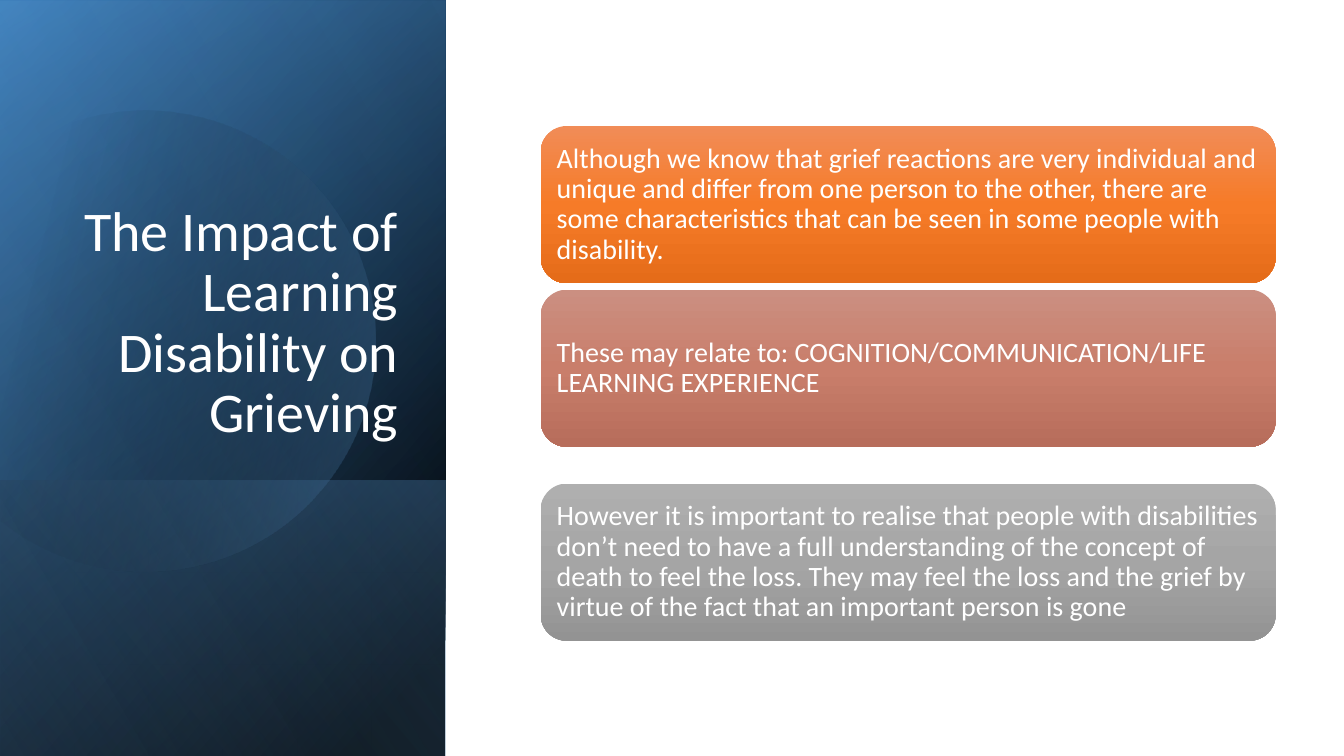
from dataclasses import dataclass
from itertools import pairwise
from math import cos, radians, sin, tan

from lxml import etree
from pptx import Presentation
from pptx.dml.color import RGBColor
from pptx.enum.shapes import MSO_SHAPE
from pptx.enum.text import MSO_ANCHOR, MSO_AUTO_SIZE, PP_ALIGN
from pptx.oxml.ns import qn
from pptx.util import Pt

RECTANGLE = MSO_SHAPE.RECTANGLE
ROUNDED = MSO_SHAPE.ROUNDED_RECTANGLE
BOTTOM, MIDDLE = MSO_ANCHOR.BOTTOM, MSO_ANCHOR.MIDDLE
LEFT, RIGHT = PP_ALIGN.LEFT, PP_ALIGN.RIGHT
NO_AUTOFIT = MSO_AUTO_SIZE.NONE
TITLE_ONLY = 5


@dataclass(frozen=True)
class Theme:
    """Colours, font and type sizes of the slide."""
    font: str = "Calibri"
    title_size: int = 40
    card_size: int = 20
    text: str = "FFFFFF"
    black: str = "000000"
    deep_blue: str = "2E75B6"
    blue: str = "5B9BD5"
    pale_blue: str = "9DC3E6"
    orange: tuple = ("F18C57", "F67B28", "E56C19")
    rose: tuple = ("CB8F81", "C97E6B", "B76D5B")
    grey: tuple = ("AFAFAF", "A5A5A5", "939393")


THEME = Theme()
PANEL = (-111, 111, 540, 318.24)
PANEL_FOOT = (60.5, 282.6, 197.3, 318.24)
CIRCLE_TURNS = (-118, -90, 0, 90, 150)
CARDS = [
    (90, THEME.orange, "Although we know that grief reactions are very individual "
     "and unique and differ from one person to the other, there are some "
     "characteristics that can be seen in some people with disability."),
    (206.9, THEME.rose, "These may relate to: COGNITION/COMMUNICATION/LIFE "
     "LEARNING EXPERIENCE"),
    (345.4, THEME.grey, "However it is important to realise that people with "
     "disabilities don’t need to have a full understanding of the concept of "
     "death to feel the loss. They may feel the loss and the grief by virtue of "
     "the fact that an important person is gone"),
]


def paint_gradient(shape, stops, angle):
    """Fill a shape with (position, colour, opacity) stops at a clockwise angle."""
    shape.shadow.inherit = False
    shape.line.fill.background()
    shape.fill.gradient()
    shape.fill.gradient_angle = 360 - angle
    stop_list = shape._element.spPr.find(qn("a:gradFill")).find(qn("a:gsLst"))
    for old_stop in list(stop_list):
        stop_list.remove(old_stop)
    for position, colour, opacity in stops:
        stop = etree.SubElement(stop_list, qn("a:gs"), pos=str(position * 1000))
        tint = etree.SubElement(stop, qn("a:srgbClr"), val=colour)
        if opacity < 100:
            etree.SubElement(tint, qn("a:alpha"), val=str(opacity * 1000))


def add_panel(page, place, stops, angle):
    """Add a mirrored rectangle turned by a quarter."""
    panel = page.shapes.add_shape(RECTANGLE, *map(Pt, place))
    panel.rotation = 90
    panel._element.spPr.find(qn("a:xfrm")).set("flipH", "1")
    paint_gradient(panel, stops, angle)


def arc_point(centre, radius, turn, reach=0):
    """Return a point on a circle, moved by reach radii along its tangent."""
    across, down = cos(radians(turn)), sin(radians(turn))
    return (Pt(centre[0] + radius * (across - reach * down)),
            Pt(centre[1] + radius * (down + reach * across)))


def add_clipped_circle(page, centre, radius, rotation, stops, angle):
    """Add a circle with one side cut off by a straight edge."""
    points = [arc_point(centre, radius, turn) for turn in CIRCLE_TURNS]
    builder = page.shapes.build_freeform(*points[0])
    builder.add_line_segments(points[1:], close=True)
    circle = builder.convert_to_shape()
    lines = list(circle._element.spPr.iter(qn("a:lnTo")))
    for line, (start, end) in zip(lines, pairwise(CIRCLE_TURNS)):
        reach = 4 / 3 * tan(radians(end - start) / 4)
        curve = etree.Element(qn("a:cubicBezTo"))
        for turn, shift in ((start, reach), (end, -reach), (end, 0)):
            x, y = arc_point(centre, radius, turn, shift)
            etree.SubElement(curve, qn("a:pt"), x=str(x - circle.left),
                             y=str(y - circle.top))
        line.getparent().replace(line, curve)
    circle.rotation = rotation
    paint_gradient(circle, stops, angle)


def write_text(shape, text, size, align, anchor):
    """Write one paragraph into a shape and format it."""
    frame = shape.text_frame
    frame.text = text
    frame.word_wrap = True
    frame.auto_size = NO_AUTOFIT
    frame.vertical_anchor = anchor
    para = frame.paragraphs[0]
    para.alignment = align
    para.line_spacing = 0.9
    for span in para.runs:
        span.font.name = THEME.font
        span.font.size = Pt(size)
        span.font.color.rgb = RGBColor.from_string(THEME.text)


def place_title(page, text):
    """Move the title placeholder in front of the panels and fill it."""
    title = page.shapes.title
    title.left, title.top, title.width, title.height = map(
        Pt, (46, 132.7, 245.5, 188.6))
    page.shapes._spTree.append(title._element)
    write_text(title, text, THEME.title_size, RIGHT, BOTTOM)


def add_card(page, top, colours, text):
    """Add a rounded card with a vertical gradient and its text."""
    card = page.shapes.add_shape(ROUNDED, Pt(386.2), Pt(top), Pt(525), Pt(112.3))
    stops = [(50 * step, colour, 100) for step, colour in enumerate(colours)]
    paint_gradient(card, stops, 90)
    frame = card.text_frame
    frame.margin_left = frame.margin_right = Pt(6)
    frame.margin_top = frame.margin_bottom = Pt(6)
    write_text(card, text, THEME.card_size, LEFT, MIDDLE)


def main():
    """Build the slide and save it."""
    deck = Presentation()
    deck.slide_width, deck.slide_height = Pt(960), Pt(540)
    page = deck.slides.add_slide(deck.slide_layouts[TITLE_ONLY])
    black, blue = THEME.black, THEME.blue
    add_panel(page, PANEL, [(8, black, 100), (100, THEME.deep_blue, 100)], 50)
    add_panel(page, PANEL, [(0, black, 0), (99, blue, 46)], 30)
    add_panel(page, PANEL_FOOT, [(2, blue, 29), (100, black, 30)], 130)
    add_clipped_circle(page, (103.2, 240.8), 164.6, 343.9,
                       [(29, black, 0), (100, blue, 43)], 30)
    add_panel(page, PANEL, [(0, black, 0), (99, THEME.pale_blue, 11)], 120)
    place_title(page, "The Impact of Learning Disability on Grieving")
    for top, colours, text in CARDS:
        add_card(page, top, colours, text)
    deck.save("out.pptx")


if __name__ == "__main__":
    main()
